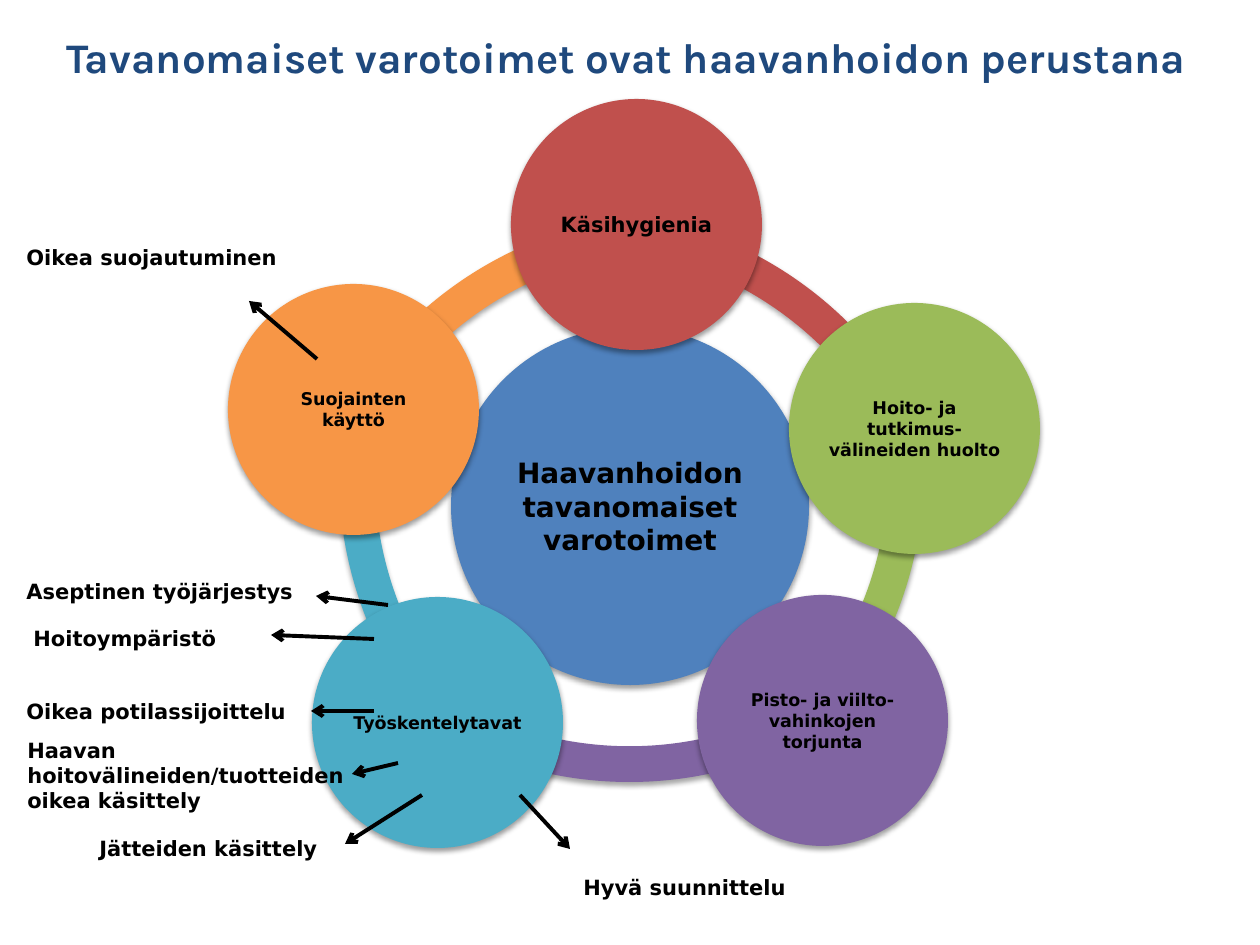
from dataclasses import dataclass

from lxml import etree
from pptx import Presentation
from pptx import util as u
from pptx.dml.color import RGBColor
from pptx.enum import shapes, text
from pptx.oxml import parse_xml
from pptx.oxml.ns import nsdecls, qn

EMU_PER_PX = 914400 / 126


def px(length):
    return u.Emu(round(length * EMU_PER_PX))


@dataclass(frozen=True)
class Theme:
    body_font: str = "DejaVu Sans"
    title_font: str = "Karla"
    title_size: int = 24
    hub_size: int = 16
    label_size: int = 12
    small_size: int = 10
    arrow_width: float = 2.25
    ink: str = "000000"
    navy: str = "1F497D"
    blue: str = "4F81BD"
    red: str = "C0504D"
    green: str = "9BBB59"
    purple: str = "8064A2"
    teal: str = "4BACC6"
    orange: str = "F79646"


class Diagram:
    def __init__(self, slide, theme):
        self.slide = slide
        self.theme = theme

    def style(self, frame, size, color, font, align):
        for paragraph in frame.paragraphs:
            paragraph.alignment = align
            paragraph.font.size = u.Pt(size)
            paragraph.font.bold = True
            paragraph.font.name = font
            paragraph.font.color.rgb = RGBColor.from_string(color)

    def title(self, words, left, top, width, height):
        holder = self.slide.shapes.title
        holder.left, holder.top = px(left), px(top)
        holder.width, holder.height = px(width), px(height)
        frame = holder.text_frame
        frame.text = words
        frame.auto_size = text.MSO_AUTO_SIZE.NONE
        frame.vertical_anchor = text.MSO_ANCHOR.TOP
        self.style(frame, self.theme.title_size, self.theme.navy,
                   self.theme.title_font, text.PP_ALIGN.LEFT)

    def round_shape(self, kind, left, top, diameter, color, opacity, distance):
        shape = self.slide.shapes.add_shape(
            kind, px(left), px(top), px(diameter), px(diameter))
        shape.fill.solid()
        shape.fill.fore_color.rgb = RGBColor.from_string(color)
        shape.line.fill.background()
        shape.shadow.inherit = False
        effects = shape._element.spPr.find(qn("a:effectLst"))
        effects.append(parse_xml(
            f'<a:outerShdw {nsdecls("a")} blurRad="{u.Pt(3.1)}" '
            f'dist="{u.Pt(distance)}" dir="5400000" rotWithShape="0">'
            f'<a:srgbClr val="{self.theme.ink}"><a:alpha val="{opacity * 1000}"/>'
            '</a:srgbClr></a:outerShdw>'))
        return shape

    def arc(self, left, top, start, end, color):
        """Ring segment, clockwise between two angles in degrees."""
        ring = self.round_shape(shapes.MSO_SHAPE.BLOCK_ARC, left, top, 777,
                                color, 35, 1.8)
        # Angles are stored in 60000ths of a degree, adjustments in 100000ths.
        ring.adjustments[0] = start * 0.6
        ring.adjustments[1] = end * 0.6
        ring.adjustments[2] = 0.046

    def circle(self, words, left, top, diameter, color, size):
        disc = self.round_shape(shapes.MSO_SHAPE.OVAL, left, top, diameter,
                                color, 38, 1.6)
        frame = disc.text_frame
        frame.word_wrap = True
        frame.vertical_anchor = text.MSO_ANCHOR.MIDDLE
        frame.margin_left = frame.margin_right = px(2)
        frame.margin_top = frame.margin_bottom = px(2)
        frame.text = words
        self.style(frame, size, self.theme.ink, self.theme.body_font,
                   text.PP_ALIGN.CENTER)

    def label(self, words, left, top, width, height=38):
        box = self.slide.shapes.add_textbox(
            px(left), px(top), px(width), px(height))
        frame = box.text_frame
        frame.word_wrap = True
        frame.text = words
        self.style(frame, self.theme.label_size, self.theme.ink,
                   self.theme.body_font, text.PP_ALIGN.LEFT)

    def arrow(self, *ends):
        line = self.slide.shapes.add_connector(
            shapes.MSO_CONNECTOR.STRAIGHT, *map(px, ends))
        line.line.width = u.Pt(self.theme.arrow_width)
        line.line.color.rgb = RGBColor.from_string(self.theme.ink)
        etree.SubElement(line.line._get_or_add_ln(), qn("a:tailEnd"), type="arrow")
        etree.SubElement(line._element.spPr, qn("a:effectLst"))


def main():
    deck = Presentation()
    deck.slide_width, deck.slide_height = u.Inches(10), u.Inches(7.5)
    theme = Theme()
    diagram = Diagram(deck.slides.add_slide(deck.slide_layouts[5]), theme)

    diagram.title("Tavanomaiset varotoimet ovat haavanhoidon perustana",
                  54, 25, 1150, 63)

    # Ring segments behind the circles
    for segment in (
        (292, 213, 210.41, 263.21, theme.orange),
        (339, 87, 139.71, 190.15, theme.teal),
        (241, 5, 59.41, 120.21, theme.purple),
        (147, 82, 353.63, 41.25, theme.green),
        (186, 210, 279.27, 333.19, theme.red),
    ):
        diagram.arc(*segment)

    # Hub and the five precautions around it
    diagram.circle("Haavanhoidon tavanomaiset varotoimet",
                   451, 327, 358, theme.blue, theme.hub_size)
    for words, left, top, color, size in (
        ("Käsihygienia", 511, 99, theme.red, theme.label_size),
        ("Hoito- ja\ntutkimus-\nvälineiden huolto", 789, 303,
         theme.green, theme.small_size),
        ("Pisto- ja viilto-\nvahinkojen torjunta", 697, 595,
         theme.purple, theme.small_size),
        ("Työskentelytavat", 312, 597, theme.teal, theme.small_size),
        ("Suojainten käyttö", 228, 284, theme.orange, theme.small_size),
    ):
        diagram.circle(words, left, top, 251, color, size)

    # Details, each with the arrow that points to it
    for detail, pointer in (
        (("Aseptinen työjärjestys", 14, 572, 297), (388, 605, 316, 596)),
        (("Oikea potilassijoittelu", 14, 692, 287), (374, 711, 311, 711)),
        (("Haavan hoitovälineiden/tuotteiden oikea käsittely", 15, 731, 367, 89),
         (398, 763, 352, 774)),
        (("Jätteiden käsittely", 87, 829, 287), (422, 795, 345, 844)),
        (("Hoitoympäristö", 21, 619, 297), (374, 639, 271, 635)),
        (("Oikea suojautuminen", 14, 238, 367), (317, 359, 249, 301)),
        (("Hyvä suunnittelu", 571, 868, 238), (520, 795, 570, 849)),
    ):
        diagram.label(*detail)
        diagram.arrow(*pointer)

    deck.save("out.pptx")


if __name__ == "__main__":
    main()
